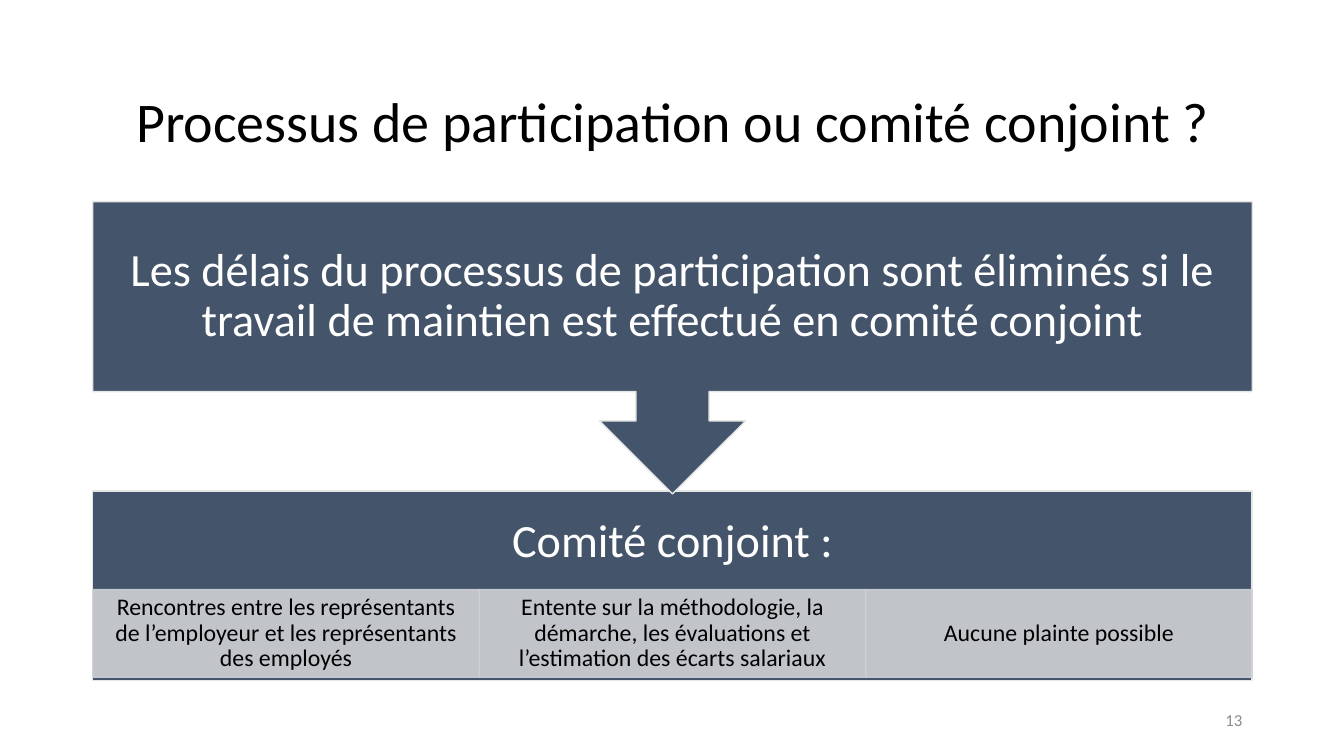
from lxml.etree import SubElement
from pptx import Presentation
from pptx.dml.color import RGBColor
from pptx.enum.shapes import MSO_SHAPE
from pptx.enum.text import MSO_ANCHOR, PP_ALIGN
from pptx.oxml.ns import qn
from pptx.util import Inches, Pt

deck = Presentation()
deck.slide_width, deck.slide_height = Inches(13.33), Inches(7.5)
slide = deck.slides.add_slide(deck.slide_layouts[6])

left, width = 0.92, 11.5
top, call, box = 2, 2.9, 1.88
base, head, row, cell = 4.87, 1.02, 5.85, 0.87
navy, pale, grey, white, black = "44546A", "E7E6E6", "CFD1D4", "FFFFFF", "000000"


def draw(kind, area, fill, edge, alpha=100):
    shape = slide.shapes.add_shape(kind, *map(Inches, area))
    shape.shadow.inherit = False
    shape.line.width = Pt(1)
    shape.fill.solid()
    for part, tone in ((shape.fill, fill), (shape.line.fill, edge)):
        part.solid()
        part.fore_color.rgb = RGBColor.from_string(tone)
    if alpha < 100:
        for tint in shape.element.spPr.iter(qn("a:srgbClr")):
            SubElement(tint, qn("a:alpha"), val=str(alpha * 1000))
    return shape


def write(area, text, size, tone, side=0.1, edge=0.05, align=PP_ALIGN.CENTER):
    frame = slide.shapes.add_textbox(*map(Inches, area)).text_frame
    style = {"word_wrap": True, "vertical_anchor": MSO_ANCHOR.MIDDLE,
             "margin_left": Inches(side), "margin_right": Inches(side),
             "margin_top": Inches(edge), "margin_bottom": Inches(edge)}
    for name, value in style.items():
        setattr(frame, name, value)
    line = frame.paragraphs[0]
    line.alignment, line.line_spacing = align, 0.9
    run = line.add_run()
    run.text = text
    for name, value in {"name": "Calibri", "size": Pt(size)}.items():
        setattr(run.font, name, value)
    run.font.color.rgb = RGBColor.from_string(tone)


write((left, 0.61, width, 1.24),
      "Processus de participation ou comité conjoint ?", 40, black)
write((9.42, 6.95, 3, 0.4), "13", 12, "8C8C8C", align=PP_ALIGN.RIGHT)

draw(MSO_SHAPE.RECTANGLE, (left, base, width, box), navy, pale)
write((left, base, width, head), "Comité conjoint :", 33, white, 0.26, 0.26)

notes = [
    "Rencontres entre les représentants de l’employeur et les représentants des employés",
    "Entente sur la méthodologie, la démarche, les évaluations et l’estimation des écarts salariaux",
    "Aucune plainte possible",
]
step = width / len(notes)
for col, note in enumerate(notes):
    area = (left + col * step, row, step, cell)
    draw(MSO_SHAPE.RECTANGLE, area, grey, grey, 90)
    write(area, note, 17, black, 0.13, 0.02)

arrow = draw(MSO_SHAPE.UP_ARROW_CALLOUT, (left, top, width, call), navy, pale)
arrow.rotation = 180
write((left, top, width, box),
      "Les délais du processus de participation sont éliminés si le travail de maintien est effectué en comité conjoint",
      33, white, 0.26, 0.26)

deck.save("out.pptx")
